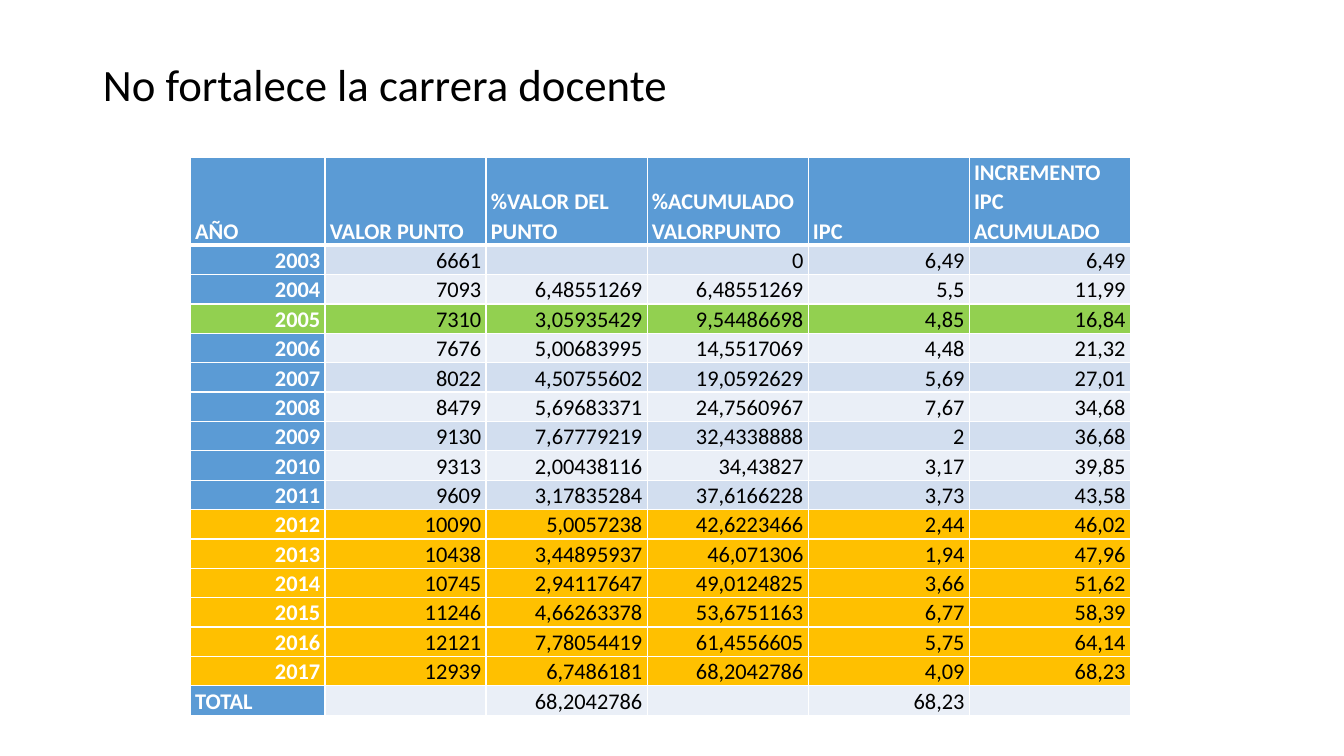
from lxml import etree
from pptx import Presentation
from pptx import util as u
from pptx.dml.color import RGBColor
from pptx.enum import text
from pptx.oxml.ns import qn

FONT = "Calibri"
WHITE, BLACK = "FFFFFF", "000000"
BLUE, GREEN, AMBER = "5B9BD5", "92D050", "FFC000"
BANDS = ("D2DEEF", "EAEFF7")
HEADER_HEIGHT, ROW_HEIGHT = u.Cm(2.22), u.Cm(0.74)
YEAR_WIDTH, VALUE_WIDTH = u.Cm(3.39), u.Cm(4.06)

HEADERS = ["AÑO", "VALOR PUNTO", "%VALOR DEL PUNTO", "%ACUMULADO VALORPUNTO",
           "IPC", "INCREMENTO IPC ACUMULADO"]
ROWS = [
    ["2003", "6661", "", "0", "6,49", "6,49"],
    ["2004", "7093", "6,48551269", "6,48551269", "5,5", "11,99"],
    ["2005", "7310", "3,05935429", "9,54486698", "4,85", "16,84"],
    ["2006", "7676", "5,00683995", "14,5517069", "4,48", "21,32"],
    ["2007", "8022", "4,50755602", "19,0592629", "5,69", "27,01"],
    ["2008", "8479", "5,69683371", "24,7560967", "7,67", "34,68"],
    ["2009", "9130", "7,67779219", "32,4338888", "2", "36,68"],
    ["2010", "9313", "2,00438116", "34,43827", "3,17", "39,85"],
    ["2011", "9609", "3,17835284", "37,6166228", "3,73", "43,58"],
    ["2012", "10090", "5,0057238", "42,6223466", "2,44", "46,02"],
    ["2013", "10438", "3,44895937", "46,071306", "1,94", "47,96"],
    ["2014", "10745", "2,94117647", "49,0124825", "3,66", "51,62"],
    ["2015", "11246", "4,66263378", "53,6751163", "6,77", "58,39"],
    ["2016", "12121", "7,78054419", "61,4556605", "5,75", "64,14"],
    ["2017", "12939", "6,7486181", "68,2042786", "4,09", "68,23"],
    ["TOTAL", "", "68,2042786", "", "68,23", ""],
]
HIGHLIGHTS = {"2005": GREEN} | {str(year): AMBER for year in range(2012, 2018)}


def colour(value):
    return RGBColor.from_string(value)


def add_run(paragraph, words, size, hex_colour, bold=False):
    run = paragraph.add_run()
    run.text = words
    run.font.name = FONT
    run.font.size = u.Pt(size)
    run.font.bold = bold
    run.font.color.rgb = colour(hex_colour)


def add_title(slide, left, top, width, height):
    title = slide.shapes.title
    title.left, title.top, title.width, title.height = left, top, width, height
    title.text_frame.vertical_anchor = text.MSO_ANCHOR.MIDDLE
    paragraph = title.text_frame.paragraphs[0]
    paragraph.alignment = text.PP_ALIGN.LEFT
    paragraph.line_spacing = 0.9
    add_run(paragraph, "No fortalece la carrera docente", 32, BLACK)


def set_borders(cell, top=1, bottom=1):
    """Draw white borders, with widths in points."""
    properties = cell._tc.get_or_add_tcPr()
    for side, points in (("L", 1), ("R", 1), ("T", top), ("B", bottom)):
        line = etree.SubElement(properties, qn(f"a:ln{side}"), w=str(u.Pt(points)))
        fill = etree.SubElement(line, qn("a:solidFill"))
        etree.SubElement(fill, qn("a:srgbClr"), val=WHITE)


def fill_cell(cell, words, fill, hex_colour, bold, alignment):
    cell.margin_left = cell.margin_right = u.Cm(0.12)
    cell.margin_top = cell.margin_bottom = 0
    cell.vertical_anchor = text.MSO_ANCHOR.BOTTOM
    cell.fill.solid()
    cell.fill.fore_color.rgb = colour(fill)
    paragraph = cell.text_frame.paragraphs[0]
    paragraph.alignment = alignment
    paragraph.line_spacing = 1.07
    if words:
        add_run(paragraph, words, 16, hex_colour, bold)
    else:
        etree.SubElement(paragraph._p, qn("a:endParaRPr"), sz="1600")


def add_points_table(slide, left, top):
    grid = [HEADERS] + ROWS
    width = YEAR_WIDTH + VALUE_WIDTH * (len(HEADERS) - 1)
    height = HEADER_HEIGHT + ROW_HEIGHT * len(ROWS)
    table = slide.shapes.add_table(len(grid), len(HEADERS), left, top, width, height).table
    for index, column in enumerate(table.columns):
        column.width = VALUE_WIDTH if index else YEAR_WIDTH
    for row_index, values in enumerate(grid):
        is_header = row_index == 0
        table.rows[row_index].height = HEADER_HEIGHT if is_header else ROW_HEIGHT
        for column_index, words in enumerate(values):
            is_label = is_header or column_index == 0
            band = BLUE if is_label else BANDS[(row_index - 1) % 2]
            is_left = is_header or words == "TOTAL"
            cell = table.cell(row_index, column_index)
            set_borders(cell, top=3 if row_index == 1 else 1, bottom=3 if is_header else 1)
            fill_cell(cell, words, HIGHLIGHTS.get(values[0], band),
                      WHITE if is_label else BLACK, is_label,
                      text.PP_ALIGN.LEFT if is_left else text.PP_ALIGN.RIGHT)


def main():
    presentation = Presentation()
    presentation.slide_width, presentation.slide_height = u.Cm(33.87), u.Cm(19.05)
    slide = presentation.slides.add_slide(presentation.slide_layouts[5])
    add_title(slide, u.Cm(2.34), u.Cm(1.02), u.Cm(29.21), u.Cm(2.34))
    add_points_table(slide, u.Cm(4.8), u.Cm(3.96))
    presentation.save("out.pptx")


if __name__ == "__main__":
    main()
